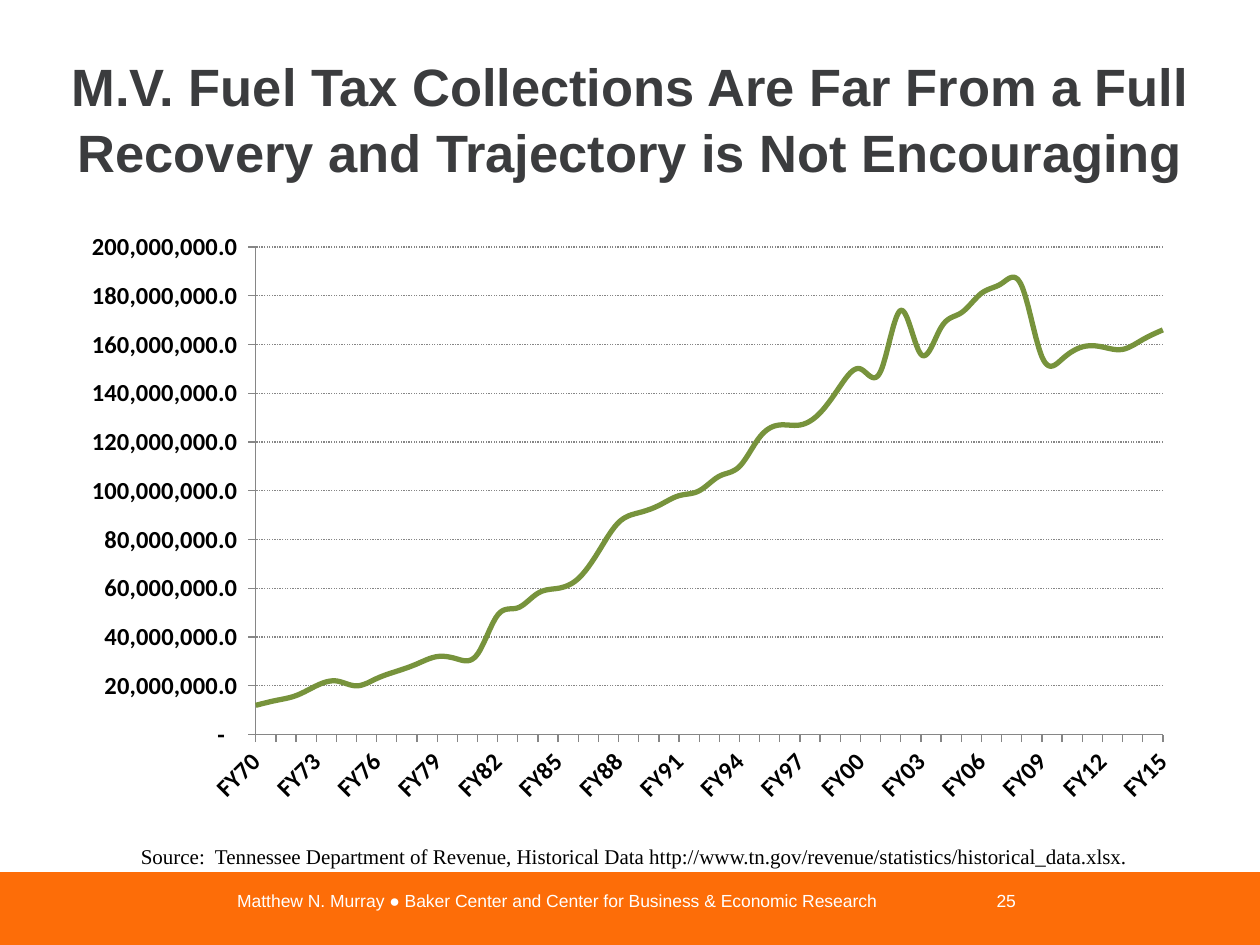
import pptx
import pptx.chart.data
import pptx.dml.color
import pptx.enum.chart
import pptx.enum.dml
import pptx.enum.shapes
import pptx.enum.text
import pptx.oxml
import pptx.oxml.ns
import pptx.util

Cm = pptx.util.Cm
Pt = pptx.util.Pt
ALIGN = pptx.enum.text.PP_ALIGN
ANCHOR = pptx.enum.text.MSO_ANCHOR

COLORS = {
    "bar": "FD6D08",
    "title": "3B3C3E",
    "white": "FFFFFF",
    "black": "000000",
    "line": "77933C",
    "axis": "868686",
}

COLLECTIONS_MILLIONS = [
    12, 14, 16, 20, 22, 20, 23, 26, 29, 32,
    31, 33, 49, 52, 58, 60, 64, 75, 87, 91,
    94, 98, 100, 106, 110, 122, 127, 127, 132, 143,
    150, 149, 174, 156, 167, 173, 181, 185, 184, 155,
    154, 159, 159, 158, 162, 166,
]


def rgb(name):
    return pptx.dml.color.RGBColor.from_string(COLORS[name])


def add_bar(s, x, y, w, h, color):
    sp = s.shapes.add_shape(
        pptx.enum.shapes.MSO_SHAPE.RECTANGLE, Cm(x), Cm(y), Cm(w), Cm(h))
    sp.shadow.inherit = False
    sp.fill.solid()
    sp.fill.fore_color.rgb = rgb(color)
    sp.line.fill.background()


def add_text(s, x, y, w, h, text, font, size, color, align=ALIGN.LEFT,
             anchor=ANCHOR.MIDDLE, bold=False, spacing=1.0):
    tf = s.shapes.add_textbox(Cm(x), Cm(y), Cm(w), Cm(h)).text_frame
    tf.word_wrap = True
    tf.vertical_anchor = anchor
    p = tf.paragraphs[0]
    p.alignment = align
    p.line_spacing = spacing
    r = p.add_run()
    r.text = text
    r.font.name = font
    r.font.size = Pt(size)
    r.font.bold = bold
    r.font.color.rgb = rgb(color)


def set_plot_area(chart, x, y, w, h):
    qn = pptx.oxml.ns.qn
    area = chart._chartSpace.chart.plotArea
    for old in area.findall(qn("c:layout")):
        area.remove(old)
    sizes = "".join(f'<c:{tag} val="{val}"/>'
                    for tag, val in zip("xywh", (x, y, w, h)))
    area.insert(0, pptx.oxml.parse_xml(
        f'<c:layout {pptx.oxml.ns.nsdecls("c")}><c:manualLayout>'
        '<c:layoutTarget val="inner"/><c:xMode val="edge"/><c:yMode val="edge"/>'
        f'{sizes.replace("<c:x ", "<c:x ")}</c:manualLayout></c:layout>'))


def style_axis(axis):
    axis.major_tick_mark = pptx.enum.chart.XL_TICK_MARK.OUTSIDE
    axis.minor_tick_mark = pptx.enum.chart.XL_TICK_MARK.NONE
    axis.format.line.color.rgb = rgb("axis")
    axis.format.line.width = Pt(0.75)
    font = axis.tick_labels.font
    font.name = "Calibri"
    font.size = Pt(14)
    font.bold = True
    font.color.rgb = rgb("black")


def style_category_axis(axis):
    qn = pptx.oxml.ns.qn
    style_axis(axis)
    axis.has_major_gridlines = False
    axis._element.find(qn("c:txPr")).find(qn("a:bodyPr")).set("rot", "-2700000")
    last = axis._element.find(qn("c:noMultiLvlLbl"))
    for tag, step in (("tickLblSkip", 3), ("tickMarkSkip", 1)):
        last.addprevious(pptx.oxml.parse_xml(
            f'<c:{tag} {pptx.oxml.ns.nsdecls("c")} val="{step}"/>'))


def style_value_axis(axis):
    qn = pptx.oxml.ns.qn
    style_axis(axis)
    axis.minimum_scale = 0
    axis.maximum_scale = 200_000_000
    axis.major_unit = 20_000_000
    axis.tick_labels.number_format = '_(* #,##0.0_);_(* \\(#,##0.0\\);_(* "-"?_)'
    axis.tick_labels.number_format_is_linked = False
    axis.has_major_gridlines = True
    grid = axis.major_gridlines.format.line
    grid.color.rgb = rgb("axis")
    grid.width = Pt(0.75)
    grid.dash_style = pptx.enum.dml.MSO_LINE.ROUND_DOT
    cross = axis._element.find(qn("c:crossBetween"))
    if cross is None:
        cross = pptx.oxml.parse_xml(
            f'<c:crossBetween {pptx.oxml.ns.nsdecls("c")} val="midCat"/>')
        axis._element.find(qn("c:majorUnit")).addprevious(cross)
    cross.set("val", "midCat")


def add_collections_chart(s, x, y, w, h):
    data = pptx.chart.data.CategoryChartData()
    data.categories = [f"FY{(70 + i) % 100:02d}"
                       for i in range(len(COLLECTIONS_MILLIONS))]
    data.add_series("Series 1", [v * 1_000_000 for v in COLLECTIONS_MILLIONS])
    chart = s.shapes.add_chart(pptx.enum.chart.XL_CHART_TYPE.LINE,
                               Cm(x), Cm(y), Cm(w), Cm(h), data).chart
    chart.has_legend = False
    chart.has_title = False
    chart.font.name = "Calibri"
    chart.font.size = Pt(18)
    chart.font.color.rgb = rgb("black")
    set_plot_area(chart, 0.17, 0.04, 0.8, 0.82)
    plot = chart.plots[0]
    plot.vary_by_categories = False
    series = plot.series[0]
    series.smooth = True
    series.marker.style = pptx.enum.chart.XL_MARKER_STYLE.NONE
    series.format.line.color.rgb = rgb("line")
    series.format.line.width = Pt(3)
    style_category_axis(chart.category_axis)
    style_value_axis(chart.value_axis)


def main():
    prs = pptx.Presentation()
    prs.slide_width = Cm(25.4)
    prs.slide_height = Cm(19.05)
    s = prs.slides.add_slide(prs.slide_layouts[6])
    add_bar(s, 0, 17.58, 25.4, 1.47, "bar")
    add_text(s, 0.91, 0.76, 23.6, 3.18,
             "M.V. Fuel Tax Collections Are Far From a Full Recovery "
             "and Trajectory is Not Encouraging",
             "Arial", 30, "title", ALIGN.CENTER, bold=True, spacing=1.05)
    add_collections_chart(s, 1.27, 4.5, 22.86, 11.99)
    add_text(s, 3.35, 17.65, 15.75, 1.02,
             "Matthew N. Murray ● Baker Center and Center for Business "
             "& Economic Research", "Arial", 10, "white", ALIGN.CENTER)
    add_text(s, 19.46, 17.65, 1.27, 1.02, "25", "Arial", 10, "white", ALIGN.RIGHT)
    add_text(s, 2.59, 16.89, 22.28, 0.76,
             "Source:  Tennessee Department of Revenue, Historical Data "
             "http://www.tn.gov/revenue/statistics/historical_data.xlsx.",
             "Times New Roman", 12, "black", anchor=ANCHOR.TOP)
    prs.save("out.pptx")


if __name__ == "__main__":
    main()
